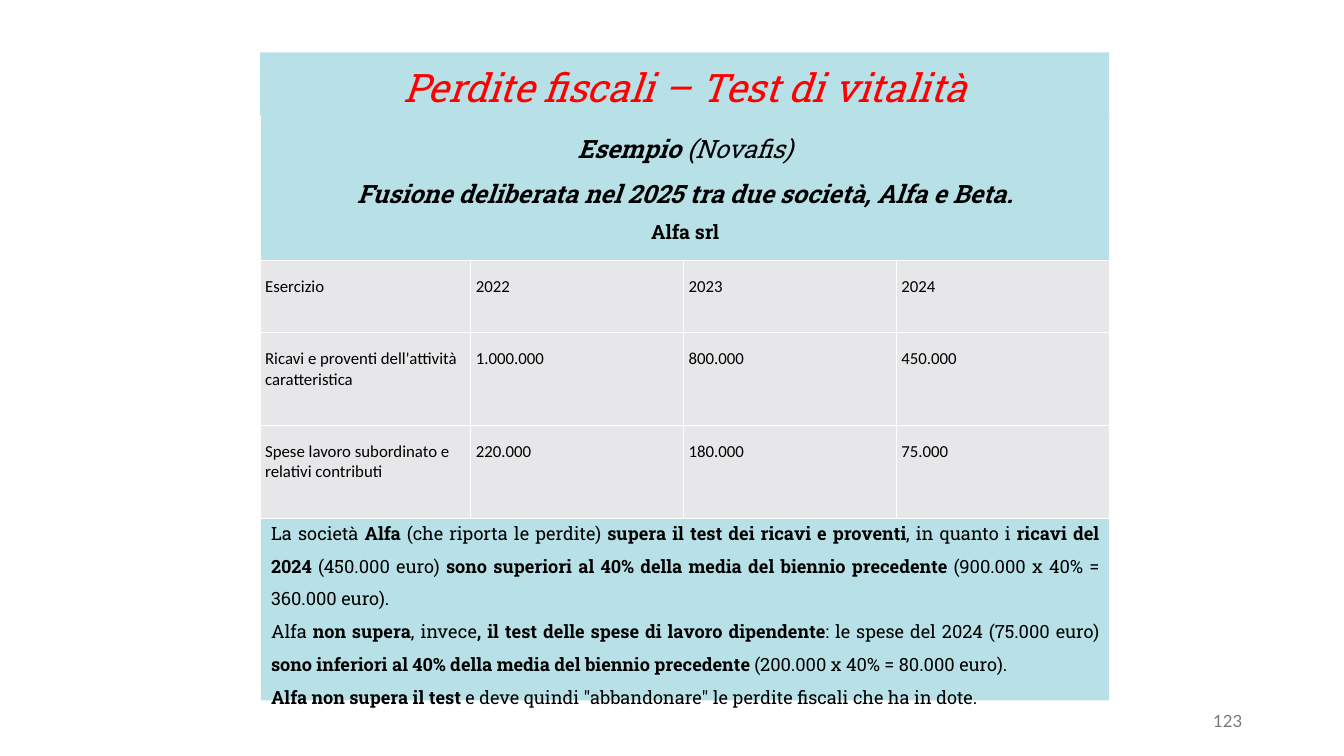
"""Build the slide on the tax-loss vitality test, with the Alfa table."""
from lxml.etree import SubElement
from pptx import Presentation
from pptx.dml.color import RGBColor
from pptx.enum.shapes import MSO_SHAPE
from pptx.enum.text import MSO_ANCHOR, PP_ALIGN
from pptx.oxml.ns import qn
from pptx.util import Inches, Pt

BLACK = RGBColor(0x00, 0x00, 0x00)
RED = RGBColor(0xFF, 0x00, 0x00)
WHITE = RGBColor(0xFF, 0xFF, 0xFF)
AQUA = RGBColor(0xB7, 0xE1, 0xE7)
CELL_GREY = RGBColor(0xE7, 0xE6, 0xE8)
NUMBER_GREY = RGBColor(0x79, 0x79, 0x79)
SLAB = "Roboto Slab"
LINE_SPACING = 1.5
TABLE_GAP = Pt(191)

TITLE = "Perdite fiscali – Test di vitalità"
PAGE_NUMBER = "123"
HEADINGS = [
    (18, True, [("Esempio ", True), ("(Novafis)", False)]),
    (18, True, [("Fusione deliberata nel 2025 tra due società, Alfa e Beta.", True)]),
    (14, False, [("Alfa srl", True)]),
]
CONCLUSIONS = [
    [("La società ", False), ("Alfa", True), (" (che riporta le perdite) ", False),
     ("supera il test dei ricavi e proventi", True), (", in quanto i ", False),
     ("ricavi del 2024", True), (" (450.000 euro) ", False),
     ("sono superiori al 40% della media del biennio precedente ", True),
     ("(900.000 x 40% = 360.000 euro).", False)],
    [("Alfa ", False), ("non supera", True), (", invece", False),
     (", il test delle spese di lavoro dipendente", True),
     (": le spese del 2024 (75.000 euro) ", False),
     ("sono inferiori al 40% della media del biennio precedente ", True),
     ("(200.000 x 40% = 80.000 euro).", False)],
    [("Alfa non supera il test ", True),
     ('e deve quindi "abbandonare" le perdite fiscali che ha in dote.', False)],
]
ROWS = [
    ("Esercizio", "2022", "2023", "2024"),
    ("Ricavi e proventi dell'attività caratteristica", "1.000.000", "800.000", "450.000"),
    ("Spese lavoro subordinato e relativi contributi", "220.000", "180.000", "75.000"),
]
COLUMN_WIDTHS = (2.09, 2.11, 2.11, 2.11)
ROW_HEIGHTS = (0.72, 0.92, 0.92)


def style(span, size, color, font, bold=False, italic=False):
    """Set the look of one run."""
    span.font.size = Pt(size)
    span.font.color.rgb = color
    span.font.name = font
    span.font.bold = bold
    span.font.italic = italic


def add_panel(page, left, top, width, height, anchor):
    """Add an aqua rectangle and return its text frame."""
    box = page.shapes.add_shape(MSO_SHAPE.RECTANGLE, Inches(left), Inches(top),
                                Inches(width), Inches(height))
    box.shadow.inherit = False
    box.fill.solid()
    box.fill.fore_color.rgb = AQUA
    box.line.fill.background()
    box.text_frame.word_wrap = True
    box.text_frame.vertical_anchor = anchor
    return box.text_frame


def add_title(page):
    """Add the title band."""
    frame = add_panel(page, 2.58, 0.52, 8.42, 0.63, MSO_ANCHOR.BOTTOM)
    frame.text = TITLE
    para = frame.paragraphs[0]
    para.alignment = PP_ALIGN.CENTER
    para.line_spacing = 0.9
    style(para.runs[0], 28, RED, SLAB, italic=True)


def add_body(page):
    """Add the headings and conclusions, leaving room for the table."""
    frame = add_panel(page, 2.59, 1.12, 8.41, 5.83, MSO_ANCHOR.TOP)
    lines = [(PP_ALIGN.CENTER, *heading) for heading in HEADINGS]
    lines += [(PP_ALIGN.JUSTIFY, 13, False, spans) for spans in CONCLUSIONS]
    for index, (alignment, size, italic, spans) in enumerate(lines):
        para = frame.add_paragraph() if index else frame.paragraphs[0]
        para.alignment = alignment
        para.line_spacing = LINE_SPACING
        if index == len(HEADINGS):
            para.space_before = TABLE_GAP
        for text, bold in spans:
            span = para.add_run()
            span.text = text
            style(span, size, BLACK, SLAB, bold, italic)


def add_borders(cell):
    """Draw thin white lines on all four sides of a cell."""
    properties = cell._tc.get_or_add_tcPr()
    for side in ("lnL", "lnR", "lnT", "lnB"):
        line = SubElement(properties, qn(f"a:{side}"), w=str(Pt(0.75)))
        fill = SubElement(line, qn("a:solidFill"))
        SubElement(fill, qn("a:srgbClr"), val=str(WHITE))


def add_figures(page):
    """Add the table of yearly figures."""
    table = page.shapes.add_table(
        len(ROWS), len(COLUMN_WIDTHS), Inches(2.58), Inches(2.58),
        Inches(sum(COLUMN_WIDTHS)), Inches(sum(ROW_HEIGHTS))).table
    table.first_row = False
    table.horz_banding = False
    for column, width in zip(table.columns, COLUMN_WIDTHS):
        column.width = Inches(width)
    for row, height, texts in zip(table.rows, ROW_HEIGHTS, ROWS):
        row.height = Inches(height)
        for cell, text in zip(row.cells, texts):
            cell.text = text
            cell.margin_left = cell.margin_right = Inches(0.05)
            cell.margin_top = cell.margin_bottom = Inches(0.16)
            add_borders(cell)
            cell.fill.solid()
            cell.fill.fore_color.rgb = CELL_GREY
            style(cell.text_frame.paragraphs[0].runs[0], 12, BLACK, "Calibri")


def add_page_number(page):
    """Add the slide number at the lower right."""
    frame = page.shapes.add_textbox(Inches(9.42), Inches(6.95),
                                    Inches(3), Inches(0.4)).text_frame
    frame.word_wrap = True
    frame.vertical_anchor = MSO_ANCHOR.MIDDLE
    frame.text = PAGE_NUMBER
    para = frame.paragraphs[0]
    para.alignment = PP_ALIGN.RIGHT
    style(para.runs[0], 12, NUMBER_GREY, "Lato")


def main():
    """Create and save the deck."""
    deck = Presentation()
    deck.slide_width = Inches(13.33)
    deck.slide_height = Inches(7.5)
    page = deck.slides.add_slide(deck.slide_layouts[6])
    add_title(page)
    add_body(page)
    add_page_number(page)
    add_figures(page)
    deck.save("out.pptx")


if __name__ == "__main__":
    main()
